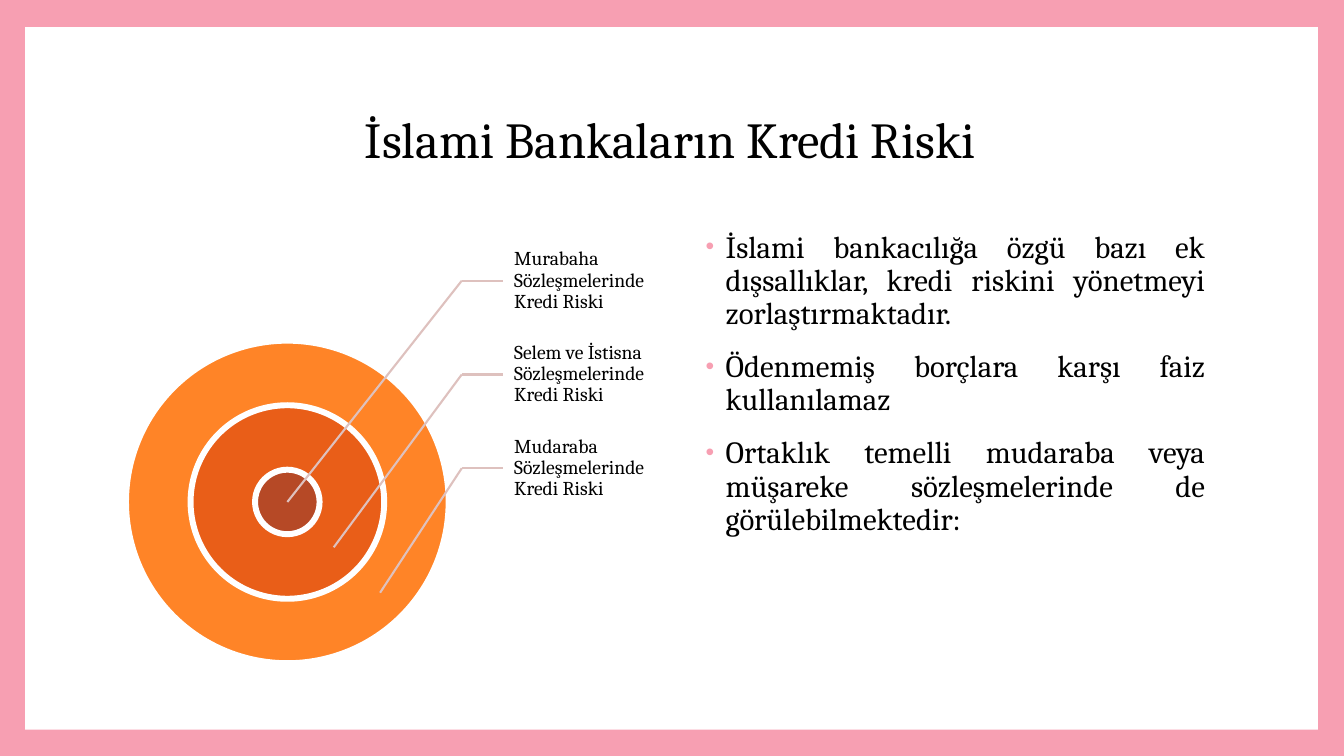
from lxml import etree
from pptx import Presentation
from pptx.dml.color import RGBColor
from pptx.enum.shapes import MSO_CONNECTOR, MSO_SHAPE
from pptx.enum.text import MSO_ANCHOR, PP_ALIGN
from pptx.oxml.ns import qn
from pptx.util import Inches, Pt

OVAL, RECTANGLE = MSO_SHAPE.OVAL, MSO_SHAPE.RECTANGLE
STRAIGHT = MSO_CONNECTOR.STRAIGHT
MIDDLE = MSO_ANCHOR.MIDDLE
LEFT, CENTER, JUSTIFY = PP_ALIGN.LEFT, PP_ALIGN.CENTER, PP_ALIGN.JUSTIFY
PINK, WHITE, LEADER = "F79FB2", "FFFFFF", "DEC1BE"


def color(hex_value):
    return RGBColor.from_string(hex_value)


def add_text(box, paragraphs, size, alignment):
    """Fill a text box with wrapped black Cambria paragraphs and return its frame."""
    frame = box.text_frame
    frame.word_wrap = True
    frame.text = "\n".join(paragraphs)
    for paragraph in frame.paragraphs:
        paragraph.alignment = alignment
        paragraph.line_spacing = 0.9
        font = paragraph.runs[0].font
        font.name = "Cambria"
        font.size = Pt(size)
        font.color.rgb = color("000000")
    return frame


presentation = Presentation()
presentation.slide_width = Inches(13.33)
presentation.slide_height = Inches(7.5)
slide = presentation.slides.add_slide(presentation.slide_layouts[6])
slide.background.fill.solid()
slide.background.fill.fore_color.rgb = color(PINK)
shapes = slide.shapes

panel = shapes.add_shape(RECTANGLE, Inches(0.25), Inches(0.27), Inches(12.82), Inches(6.97))
panel.shadow.inherit = False
panel.fill.solid()
panel.fill.fore_color.rgb = color(WHITE)
panel.line.fill.background()

title = shapes.add_textbox(Inches(1.25), Inches(0.67), Inches(10.8), Inches(1.48))
title_frame = add_text(title, ["İslami Bankaların Kredi Riski"], 36, CENTER)
title_frame.vertical_anchor = MIDDLE

# Concentric rings, from the outermost inwards
center_x, center_y = 2.85, 4.98
for diameter, fill in [(3.2, "FF8427"), (1.92, "E95E18"), (0.64, "B64926")]:
    ring = shapes.add_shape(OVAL, Inches(center_x - diameter / 2), Inches(center_y - diameter / 2),
                            Inches(diameter), Inches(diameter))
    ring.shadow.inherit = False
    ring.fill.solid()
    ring.fill.fore_color.rgb = color(fill)
    ring.line.color.rgb = color(WHITE)
    ring.line.width = Pt(4.25)

# Ring labels, each with a bent leader line into its ring
ring_labels = [
    "Murabaha Sözleşmelerinde Kredi Riski",
    "Selem ve İstisna Sözleşmelerinde Kredi Riski",
    "Mudaraba Sözleşmelerinde Kredi Riski",
]
label_left, label_top, label_height = 4.99, 2.32, 0.93
bend_x = 4.58
for index, text in enumerate(ring_labels):
    top = label_top + index * label_height
    label = shapes.add_textbox(Inches(label_left), Inches(top), Inches(1.6), Inches(label_height))
    label_frame = add_text(label, [text], 14, LEFT)
    label_frame.vertical_anchor = MIDDLE
    label_frame.margin_left = Inches(0.11)
    label_frame.margin_top = label_frame.margin_right = label_frame.margin_bottom = Inches(0.02)

    middle = top + label_height / 2
    target_x, target_y = center_x + index * 0.46, center_y + index * 0.45
    flat = shapes.add_connector(STRAIGHT, Inches(bend_x), Inches(middle),
                                Inches(label_left), Inches(middle))
    flat.end_connect(label, 1)
    slanted = shapes.add_connector(STRAIGHT, Inches(bend_x), Inches(middle),
                                   Inches(target_x), Inches(target_y))
    for leader in (flat, slanted):
        leader.line.color.rgb = color(LEADER)
        leader.line.width = Pt(1.5)
        etree.SubElement(leader._element.spPr, qn("a:effectLst"))

body_points = [
    "İslami bankacılığa özgü bazı ek dışsallıklar, kredi riskini yönetmeyi zorlaştırmaktadır.",
    "Ödenmemiş borçlara karşı faiz kullanılamaz",
    "Ortaklık temelli mudaraba veya müşareke sözleşmelerinde de görülebilmektedir:",
]
body = shapes.add_textbox(Inches(6.85), Inches(2.25), Inches(5.2), Inches(4.4))
body_frame = add_text(body, body_points, 22, JUSTIFY)
for paragraph in body_frame.paragraphs:
    paragraph.space_before = Pt(14)
    properties = paragraph._p.get_or_add_pPr()
    properties.set("marL", str(Inches(0.25)))
    properties.set("indent", str(Inches(-0.2)))
    bullet_color = etree.SubElement(properties, qn("a:buClr"))
    etree.SubElement(bullet_color, qn("a:srgbClr"), val=PINK)
    etree.SubElement(properties, qn("a:buSzPct"), val="80000")
    etree.SubElement(properties, qn("a:buFont"), typeface="Arial")
    etree.SubElement(properties, qn("a:buChar"), char="•")

presentation.save("out.pptx")
